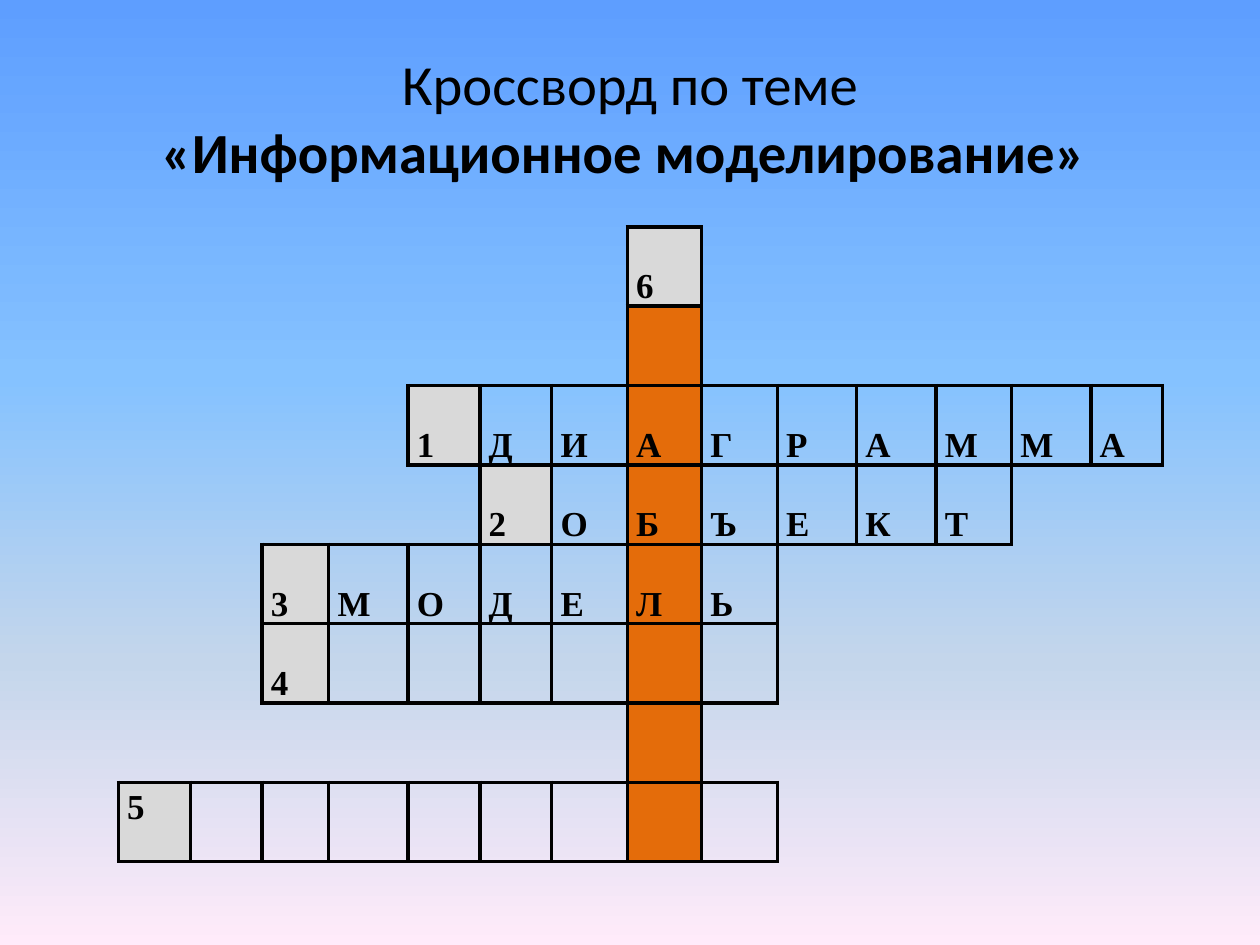
import dataclasses

import lxml.etree
import pptx
import pptx.dml.color
import pptx.enum.text
import pptx.oxml.ns
import pptx.util

Inches = pptx.util.Inches
Pt = pptx.util.Pt
qn = pptx.oxml.ns.qn
Anchor = pptx.enum.text.MSO_ANCHOR


@dataclasses.dataclass(frozen=True)
class Theme:
    ink: str = "000000"
    clue: str = "D9D9D9"
    key: str = "E46C0A"
    sky: tuple = ((0, "5E9EFF"), (40, "85C2FF"), (70, "C4D6EB"), (100, "FFEBFA"))
    head_font: str = "Calibri"
    cell_font: str = "Times New Roman"
    head_size: float = 32.4
    cell_size: float = 20
    line: float = 2.25


# Crossword: row, first column, clue number and letters (a space is an open box)
WORDS = (
    (0, 7, "6"),
    (1, 7, " "),
    (2, 4, "1ДИАГРАММА"),
    (3, 5, "2ОБЪЕКТ"),
    (4, 2, "3МОДЕЛЬ"),
    (5, 2, "4" + " " * 6),
    (6, 7, " "),
    (7, 0, "5" + " " * 8),
)
WIDTHS = (0.57, 0.57, 0.53, 0.63, 0.57, 0.57, 0.6, 0.59, 0.6, 0.63, 0.63, 0.6, 0.63, 0.57)
HEIGHT = 0.63
KEY_COL = 7
SIDES = (("L", 0, -1), ("R", 0, 1), ("T", -1, 0), ("B", 1, 0))


def paint(parent, color):
    """Add a colour element, as a gradient stop or a solid fill needs."""
    lxml.etree.SubElement(parent, qn("a:srgbClr"), val=color)


class Page:
    def __init__(self, deck, theme):
        self.theme = theme
        self.slide = deck.slides.add_slide(deck.slide_layouts[5])

    def style(self, font, name, size, bold=None):
        font.name, font.size, font.bold = name, Pt(size), bold
        font.color.rgb = pptx.dml.color.RGBColor.from_string(self.theme.ink)

    def sky(self):
        fill = self.slide.background.fill
        fill.gradient()
        fill.gradient_angle = 270
        stops = next(self.slide.element.iter(qn("a:gsLst")))
        for stop in list(stops):
            stops.remove(stop)
        for place, color in self.theme.sky:
            paint(lxml.etree.SubElement(stops, qn("a:gs"), pos=str(place * 1000)), color)

    def title(self, top_line, bold_line):
        box = self.slide.shapes.title
        box.left, box.top = Inches(0.5), Inches(0.3)
        box.width, box.height = Inches(9), Inches(1.25)
        box.text_frame.vertical_anchor = Anchor.MIDDLE
        para = box.text_frame.paragraphs[0]
        para.alignment = pptx.enum.text.PP_ALIGN.CENTER
        self.style(para.font, self.theme.head_font, self.theme.head_size)
        para.add_run().text = top_line
        para.add_line_break()
        run = para.add_run()
        run.text = bold_line
        for part in para.runs:
            self.style(part.font, self.theme.head_font, self.theme.head_size, part is run)
        run.font.bold = True

    def edge(self, cell, index, side, shown):
        line = lxml.etree.Element(qn(f"a:ln{side}"), w=str(Pt(self.theme.line)))
        if shown:
            paint(lxml.etree.SubElement(line, qn("a:solidFill")), self.theme.ink)
        else:
            lxml.etree.SubElement(line, qn("a:noFill"))
        cell._tc.get_or_add_tcPr().insert(index, line)

    def letter(self, cell, text, anchor):
        cell.vertical_anchor = anchor
        cell.margin_left = cell.margin_right = Inches(0.07)
        cell.margin_top = cell.margin_bottom = 0
        para = cell.text_frame.paragraphs[0]
        para.text = text
        para.line_spacing = 1.15
        self.style(para.font, self.theme.cell_font, self.theme.cell_size, True)

    def grid(self, words):
        boxes = {(row, start + i): char
                 for row, start, word in words for i, char in enumerate(word)}
        rows, cols = len(words), len(WIDTHS)
        table = self.slide.shapes.add_table(
            rows, cols, Inches(0.94), Inches(1.8),
            Inches(sum(WIDTHS)), Inches(HEIGHT * rows)).table
        table.first_row = table.horz_banding = False
        for col, width in zip(table.columns, WIDTHS):
            col.width = Inches(width)
        for row in range(rows):
            for col in range(cols):
                cell, char = table.cell(row, col), boxes.get((row, col), " ")
                # Clue boxes are grey, the key word column is orange
                color = (self.theme.clue if char.isdigit() else
                         self.theme.key if col == KEY_COL else None)
                if color:
                    cell.fill.solid()
                    cell.fill.fore_color.rgb = pptx.dml.color.RGBColor.from_string(color)
                else:
                    cell.fill.background()
                if char != " ":
                    last = row == rows - 1
                    self.letter(cell, char, Anchor.TOP if last else Anchor.BOTTOM)
                # A line shows wherever either side of it is a box
                for index, (side, down, right) in enumerate(SIDES):
                    near = (row + down, col + right)
                    self.edge(cell, index, side, (row, col) in boxes or near in boxes)


def main():
    deck = pptx.Presentation()
    deck.slide_width, deck.slide_height = Inches(10), Inches(7.5)
    page = Page(deck, Theme())
    page.sky()
    page.title("Кроссворд по теме", "«Информационное моделирование» ")
    page.grid(WORDS)
    deck.save("out.pptx")


if __name__ == "__main__":
    main()
